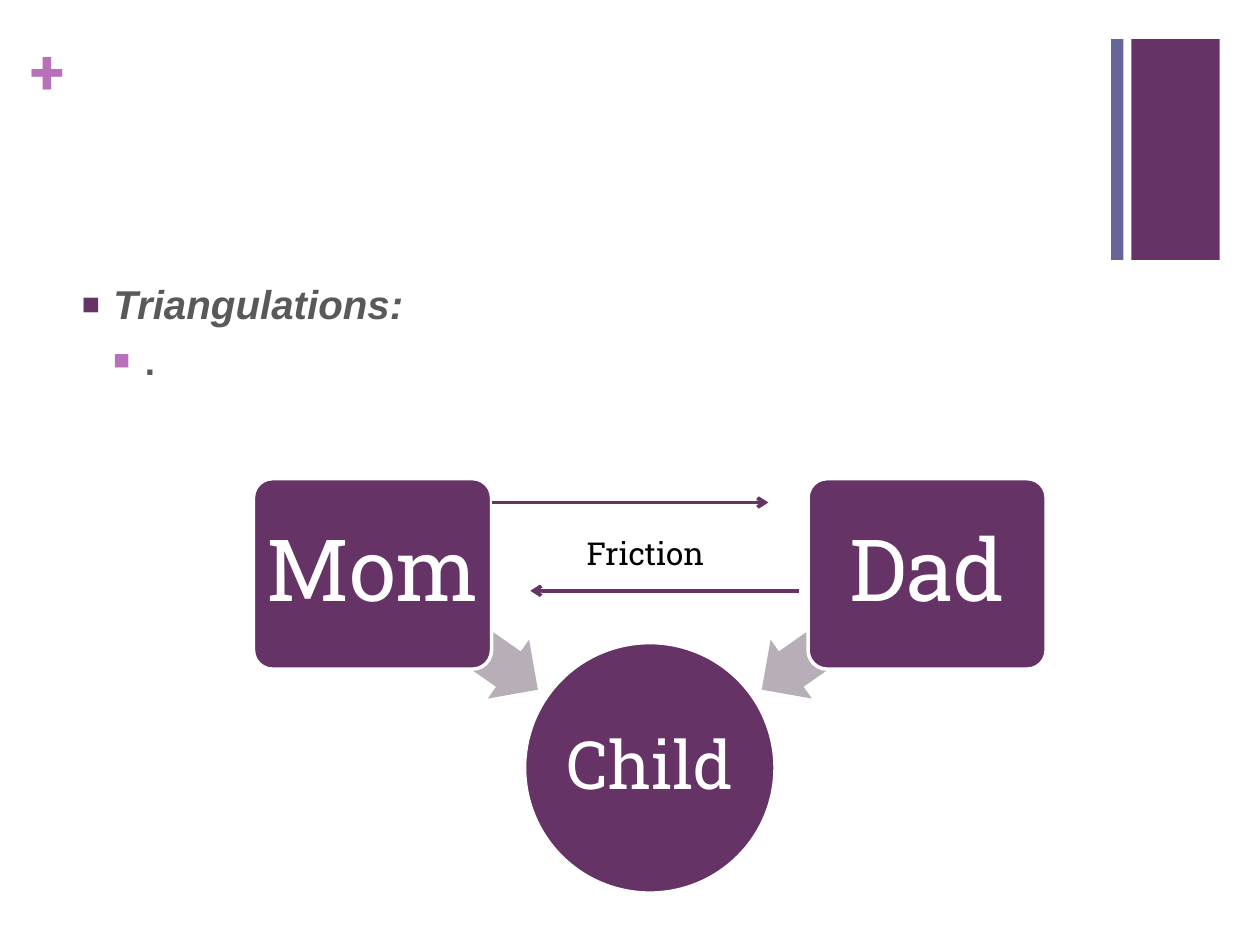
"""Build the family triangulation slide."""
from lxml import etree
from pptx import Presentation
from pptx.dml.color import RGBColor
from pptx.enum.shapes import MSO_CONNECTOR, MSO_SHAPE
from pptx.enum.text import MSO_ANCHOR, PP_ALIGN
from pptx.oxml.ns import qn
from pptx.util import Cm, Pt

RECT, OVAL = MSO_SHAPE.RECTANGLE, MSO_SHAPE.OVAL
ROUND, ARROW = MSO_SHAPE.ROUNDED_RECTANGLE, MSO_SHAPE.LEFT_ARROW
STRAIGHT = MSO_CONNECTOR.STRAIGHT
MIDDLE, TOP = MSO_ANCHOR.MIDDLE, MSO_ANCHOR.TOP
LEFT, CENTER = PP_ALIGN.LEFT, PP_ALIGN.CENTER

COLORS = {"plum": "663366", "pink": "B870B8", "slate": "666699", "haze": "B8AEB8",
          "gray": "595959", "white": "FFFFFF", "black": "000000"}
SLAB, SANS = "Roboto Slab", "Arial"

BARS = [((22.81, 0.79, 1.78, 4.45), "plum"), ((22.4, 0.79, 0.25, 4.45), "slate")]
BULLETS = [("Triangulations:", 23, True, 20, "plum"), (".", 21, False, 6, "pink")]
PARENTS = [("Mom", -1, 215), ("Dad", 1, 325)]
LINES = [(9.91, 15.49, 10.13), (16.1, 10.69, 11.91)]
AXIS = 13.1


def rgb(name):
    return RGBColor.from_string(COLORS[name])


def style(run, size, color, font=SLAB, bold=False, italic=False):
    run.font.size, run.font.name = Pt(size), font
    run.font.bold, run.font.italic = bold, italic
    run.font.color.rgb = rgb(color)


def middle(x, y, w, h):
    return x - w / 2, y - h / 2, w, h


def block(slide, kind, box, fill, edge=False):
    item = slide.shapes.add_shape(kind, *map(Cm, box))
    item.shadow.inherit = False
    item.fill.solid()
    item.fill.fore_color.rgb = rgb(fill)
    if edge:
        item.line.color.rgb = rgb("white")
        item.line.width = Pt(2)
    else:
        item.line.fill.background()
    return item


def write(frame, text, size, color, inset, anchor=MIDDLE, align=CENTER, bold=False):
    frame.text = text
    frame.vertical_anchor = anchor
    frame.margin_left = frame.margin_right = Cm(inset)
    frame.margin_top = frame.margin_bottom = Cm(inset)
    part = frame.paragraphs[0]
    part.alignment = align
    style(part.runs[0], size, color, bold=bold)
    return part


def label(slide, box, *args, **more):
    frame = slide.shapes.add_textbox(*map(Cm, box)).text_frame
    frame.word_wrap = True
    write(frame, *args, **more)


def bullet(part, level, color):
    props = part._p.get_or_add_pPr()
    props.set("marL", str(Cm(0.635 * (level + 1))))
    props.set("indent", str(-Cm(0.635)))
    tint = etree.SubElement(props, qn("a:buClr"))
    etree.SubElement(tint, qn("a:srgbClr"), val=COLORS[color])
    etree.SubElement(props, qn("a:buSzPct"), val="75000")
    etree.SubElement(props, qn("a:buFont"), typeface=SANS)
    etree.SubElement(props, qn("a:buChar"), char="■")


def outline(slide):
    frame = slide.shapes.add_textbox(*map(Cm, (1.4, 5.51, 20.98, 11.51))).text_frame
    frame.word_wrap = True
    frame.text = "\n".join(row[0] for row in BULLETS)
    for level, (part, row) in enumerate(zip(frame.paragraphs, BULLETS)):
        _, size, italic, gap, color = row
        part.level = level
        part.space_before = Pt(gap)
        bullet(part, level, color)
        style(part.runs[0], size, "gray", SANS, True, italic)


def person(slide, kind, box, name, size, inset):
    item = block(slide, kind, box, "plum", True)
    if kind == ROUND:
        item.adjustments[0] = 0.1
    item.text_frame.word_wrap = False
    write(item.text_frame, name, size, "white", inset).line_spacing = 0.9


def link(slide, start, end, y):
    line = slide.shapes.add_connector(STRAIGHT, Cm(start), Cm(y), Cm(end), Cm(y))
    line.line.color.rgb = rgb("plum")
    line.line.width = Pt(2)
    etree.SubElement(line.line._get_or_add_ln(), qn("a:tailEnd"), type="arrow")
    etree.SubElement(line._element.spPr, qn("a:effectLst"))


def main():
    deck = Presentation()
    deck.slide_width, deck.slide_height = Cm(25.4), Cm(19.05)
    slide = deck.slides.add_slide(deck.slide_layouts[6])
    for box, color in BARS:
        block(slide, RECT, box, color)
    label(slide, (0.61, 0.64, 0.74, 1.55), "+", 36, "pink", 0,
          anchor=TOP, align=LEFT, bold=True)
    outline(slide)
    person(slide, OVAL, middle(AXIS, 15.48, 5.05, 5.05), "Child", 38, 0.08)
    for name, side, turn in PARENTS:
        arrow = block(slide, ARROW, middle(AXIS + side * 3.92, 12.74, 4.06, 1.45), "haze")
        arrow.adjustments[0], arrow.adjustments[1] = 0.6, 0.5
        arrow.rotation = turn
        person(slide, ROUND, middle(AXIS + side * 5.59, 11.57, 4.8, 3.84), name, 49, 0.25)
    for row in LINES:
        link(slide, *row)
    label(slide, (9.91, 10.64, 6.2, 1.02), "Friction", 18, "black", 0.13, anchor=TOP)
    deck.save("out.pptx")


if __name__ == "__main__":
    main()
